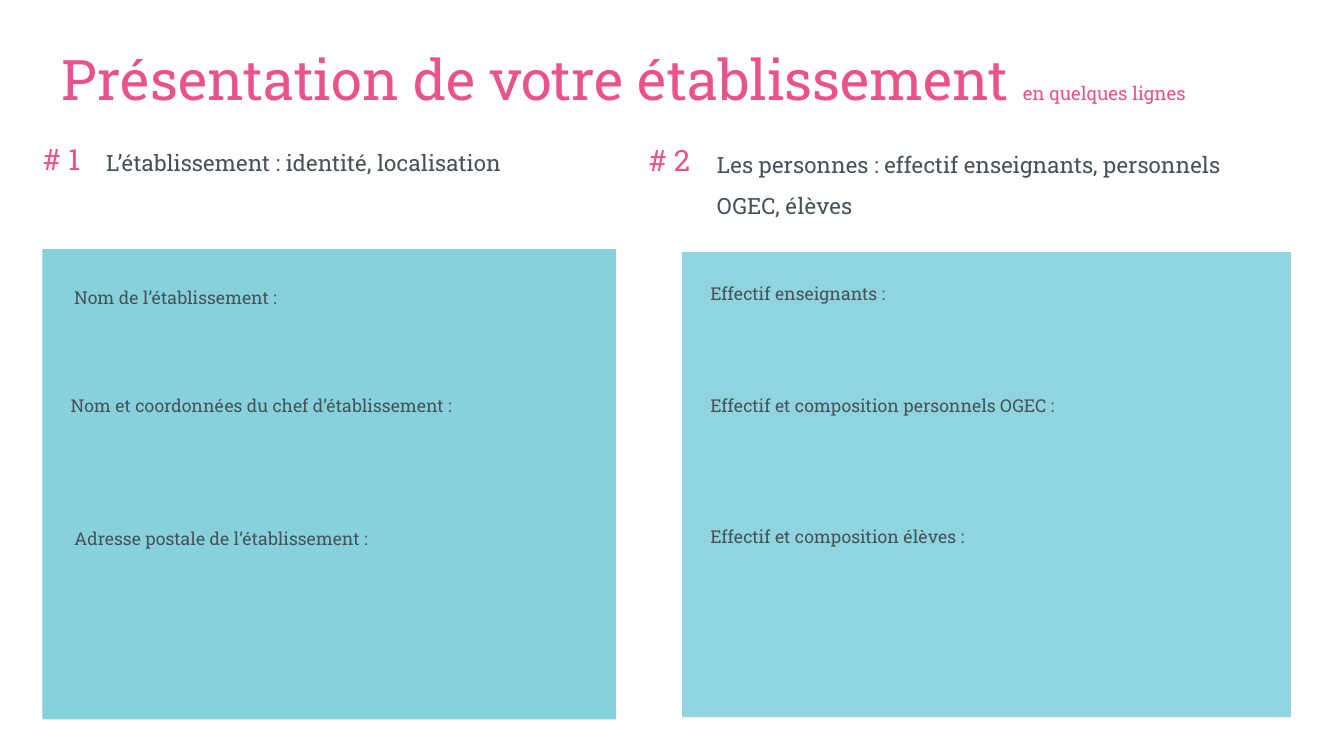
from lxml import etree
from pptx import Presentation
from pptx.dml.color import RGBColor
from pptx.enum.shapes import MSO_SHAPE
from pptx.enum.text import MSO_ANCHOR, MSO_AUTO_SIZE, PP_ALIGN
from pptx.oxml.ns import qn
from pptx.util import Cm, Pt

RECTANGLE = MSO_SHAPE.RECTANGLE
TOP = MSO_ANCHOR.TOP
NO_AUTOFIT = MSO_AUTO_SIZE.NONE
LEFT, CENTER = PP_ALIGN.LEFT, PP_ALIGN.CENTER

FONT = "Roboto Slab"
COLORS = {"pink": "EA528B", "slate": "455259", "teal": "5EC2D0"}
TITLE_ONLY = 5


def write(shape, runs, color, line_spacing, align=LEFT):
    """Fill the shape with one paragraph made of (text, size in points) runs."""
    frame = shape.text_frame
    frame.word_wrap = True
    frame.auto_size = NO_AUTOFIT
    frame.vertical_anchor = TOP
    frame.margin_left = frame.margin_right = frame.margin_top = frame.margin_bottom = 0
    paragraph = frame.paragraphs[0]
    paragraph.alignment = align
    paragraph.line_spacing = Pt(line_spacing)
    paragraph.space_before = Pt(0)
    for text, size in runs:
        run = paragraph.add_run()
        run.text = text
        run.font.name = FONT
        run.font.size = Pt(size)
        run.font.color.rgb = RGBColor.from_string(COLORS[color])


def add_text(left, top, width, height, *style):
    box = slide.shapes.add_textbox(Cm(left), Cm(top), Cm(width), Cm(height))
    write(box, *style)


presentation = Presentation()
presentation.slide_width = Cm(50.8)
presentation.slide_height = Cm(28.58)
slide = presentation.slides.add_slide(presentation.slide_layouts[TITLE_ONLY])

title = slide.shapes.title
title.left, title.top, title.width, title.height = Cm(2.34), Cm(1.55), Cm(46.91), Cm(2.57)
title_runs = [("Présentation de votre établissement ", 60), ("en quelques lignes", 20)]
write(title, title_runs, "pink", 76)

# Boxes are (left, top, width, height) in cm; fields are (left, top, label)
sections = [
    {
        "number": "# 1",
        "number_box": (1.3, 5.11, 2.06, 1.45),
        "heading": "L’établissement : identité, localisation",
        "heading_box": (4.01, 5.11, 17.15, 1.4),
        "panel": (1.6, 9.42, 21.69, 17.78),
        "opacity": 74,
        "fields": [
            (2.8, 10.72, "Nom de l’établissement :"),
            (2.67, 14.78, "Nom et coordonnées du chef d’établissement :"),
            (2.8, 19.81, "Adresse postale de l’établissement :"),
        ],
    },
    {
        "number": "# 2",
        "number_box": (24.38, 5.16, 1.85, 1.45),
        "heading": "Les personnes : effectif enseignants, personnels OGEC, élèves",
        "heading_box": (27.1, 5.16, 21.39, 2.95),
        "panel": (25.78, 9.53, 23.01, 17.58),
        "opacity": 69,
        "fields": [
            (26.85, 10.54, "Effectif enseignants :"),
            (26.85, 14.78, "Effectif et composition personnels OGEC :"),
            (26.85, 19.74, "Effectif et composition élèves :"),
        ],
    },
]

for section in sections:
    add_text(*section["number_box"], [(section["number"], 31.5)], "pink", 44.1, CENTER)
    add_text(*section["heading_box"], [(section["heading"], 24)], "slate", 44.1)

    panel = slide.shapes.add_shape(RECTANGLE, *map(Cm, section["panel"]))
    panel.shadow.inherit = False
    panel.line.fill.background()
    panel.fill.solid()
    panel.fill.fore_color.rgb = RGBColor.from_string(COLORS["teal"])
    color_element = panel.fill._xPr.find(qn("a:solidFill"))[0]
    etree.SubElement(color_element, qn("a:alpha"), val=str(section["opacity"] * 1000))

    for left, top, label in section["fields"]:
        add_text(left, top, 18.36, 0.89, [(label, 19)], "slate", 26.6)

presentation.save("out.pptx")
